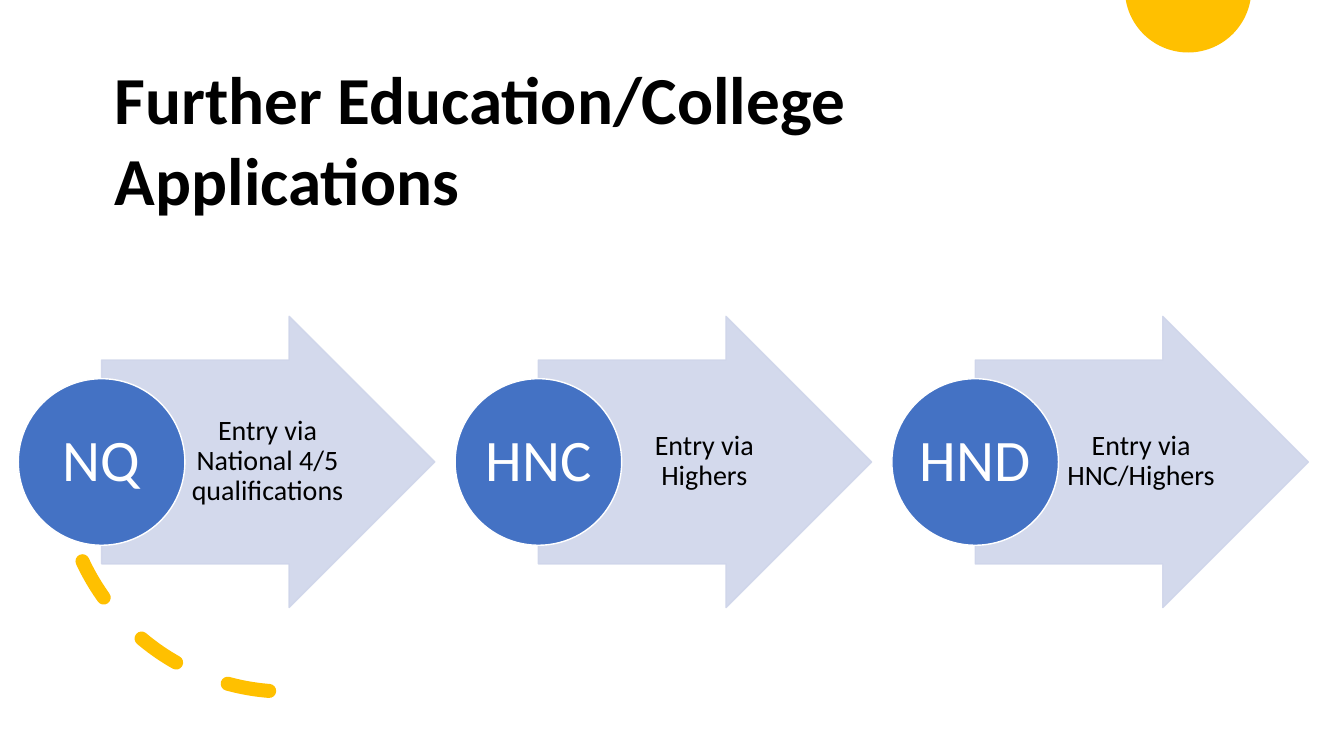
from math import acos, cos, pi, sin

from lxml.etree import SubElement
from pptx import Presentation
from pptx.dml.color import RGBColor
from pptx.enum.dml import MSO_LINE
from pptx.enum.shapes import MSO_SHAPE as SHAPE
from pptx.enum.text import MSO_ANCHOR as ANCHOR, MSO_AUTO_SIZE as AUTO_SIZE, PP_ALIGN as ALIGN
from pptx.oxml.ns import qn
from pptx.util import Pt

GOLD = RGBColor(0xFF, 0xC0, 0x00)
BLUE = RGBColor(0x44, 0x72, 0xC4)
PALE_BLUE = RGBColor(0xCF, 0xD5, 0xEA)
WHITE = RGBColor(0xFF, 0xFF, 0xFF)
BLACK = RGBColor(0x00, 0x00, 0x00)

FONT = "Calibri"
STAGE_PITCH = 312
STAGES = [
    ("NQ", "Entry via National 4/5 qualifications"),
    ("HNC", "Entry via Highers"),
    ("HND", "Entry via HNC/Highers"),
]


def set_opacity(fill_format, percent):
    color = fill_format._xPr.find(qn("a:solidFill"))[0]
    SubElement(color, qn("a:alpha")).set("val", str(percent * 1000))


def add_filled_shape(shapes, kind, box, fill, line, opacity=100):
    shape = shapes.add_shape(kind, *map(Pt, box))
    shape.shadow.inherit = False
    shape.fill.solid()
    shape.fill.fore_color.rgb = fill
    shape.line.color.rgb = line
    shape.line.width = Pt(1)
    if opacity < 100:
        set_opacity(shape.fill, opacity)
        set_opacity(shape.line.fill, opacity)
    return shape


def add_text(shapes, box, text, size, color, insets, bold=False):
    text_box = shapes.add_textbox(*map(Pt, box))
    frame = text_box.text_frame
    frame.word_wrap = True
    frame.margin_left, frame.margin_top, frame.margin_right, frame.margin_bottom = map(Pt, insets)
    run = frame.paragraphs[0].add_run()
    run.text = text
    run.font.name = FONT
    run.font.size = Pt(size)
    run.font.bold = bold
    run.font.color.rgb = color
    return frame


def center_text(frame):
    frame.vertical_anchor = ANCHOR.MIDDLE
    paragraph = frame.paragraphs[0]
    paragraph.alignment = ALIGN.CENTER
    paragraph.line_spacing = 0.9


def add_cut_circle(shapes, center_x, center_y, radius, steps=60):
    start = acos(-center_y / radius)
    angles = [pi / 2 - start + 2 * start * step / steps for step in range(steps + 1)]
    points = [
        (Pt(center_x + radius * cos(angle)), Pt(center_y + radius * sin(angle)))
        for angle in angles
    ]
    builder = shapes.build_freeform(*points[0])
    builder.add_line_segments(points[1:], close=True)
    circle = builder.convert_to_shape()
    circle.shadow.inherit = False
    circle.fill.solid()
    circle.fill.fore_color.rgb = GOLD
    circle.line.fill.background()


def add_dashed_arc(shapes, left, top, size):
    arc = shapes.add_shape(SHAPE.ARC, Pt(left), Pt(top), Pt(size), Pt(size))
    arc.shadow.inherit = False
    arc.fill.background()
    arc.rotation = 90
    arc._element.spPr.find(qn("a:xfrm")).set("flipV", "1")
    arc.line.color.rgb = GOLD
    arc.line.width = Pt(10)
    arc.line.dash_style = MSO_LINE.DASH
    arc.line._ln.set("cap", "rnd")


def add_stage(shapes, offset, name, entry):
    arrow = add_filled_shape(
        shapes, SHAPE.RIGHT_ARROW, (72.6 + offset, 226, 238, 208), PALE_BLUE, PALE_BLUE, 90
    )
    arrow.adjustments[0] = 0.7
    arrow.adjustments[1] = 0.5
    center_text(add_text(
        shapes, (132 + offset, 257, 116, 145.6), entry, 20, BLACK, (4.5, 0.9, 2.25, 0.9)
    ))
    add_filled_shape(shapes, SHAPE.OVAL, (13.1 + offset, 270.5, 119, 119), BLUE, WHITE)
    center_text(add_text(
        shapes, (30.6 + offset, 288, 84, 84), name, 42, WHITE, (2, 2, 2, 2)
    ))


def main():
    presentation = Presentation()
    presentation.slide_width = Pt(960)
    presentation.slide_height = Pt(540)
    slide = presentation.slides.add_slide(presentation.slide_layouts[6])

    add_cut_circle(slide.shapes, 848.7, -7.7, 45.2)
    add_dashed_arc(slide.shapes, 43.9, 172, 322)
    stage_shapes = slide.shapes.add_group_shape().shapes
    for index, (name, entry) in enumerate(STAGES):
        add_stage(stage_shapes, index * STAGE_PITCH, name, entry)
    title = add_text(
        slide.shapes, (75, 37.5, 537, 124), "Further Education/College Applications",
        48, BLACK, (7.2, 3.6, 7.2, 3.6), bold=True,
    )
    title.auto_size = AUTO_SIZE.SHAPE_TO_FIT_TEXT

    presentation.save("out.pptx")


if __name__ == "__main__":
    main()
